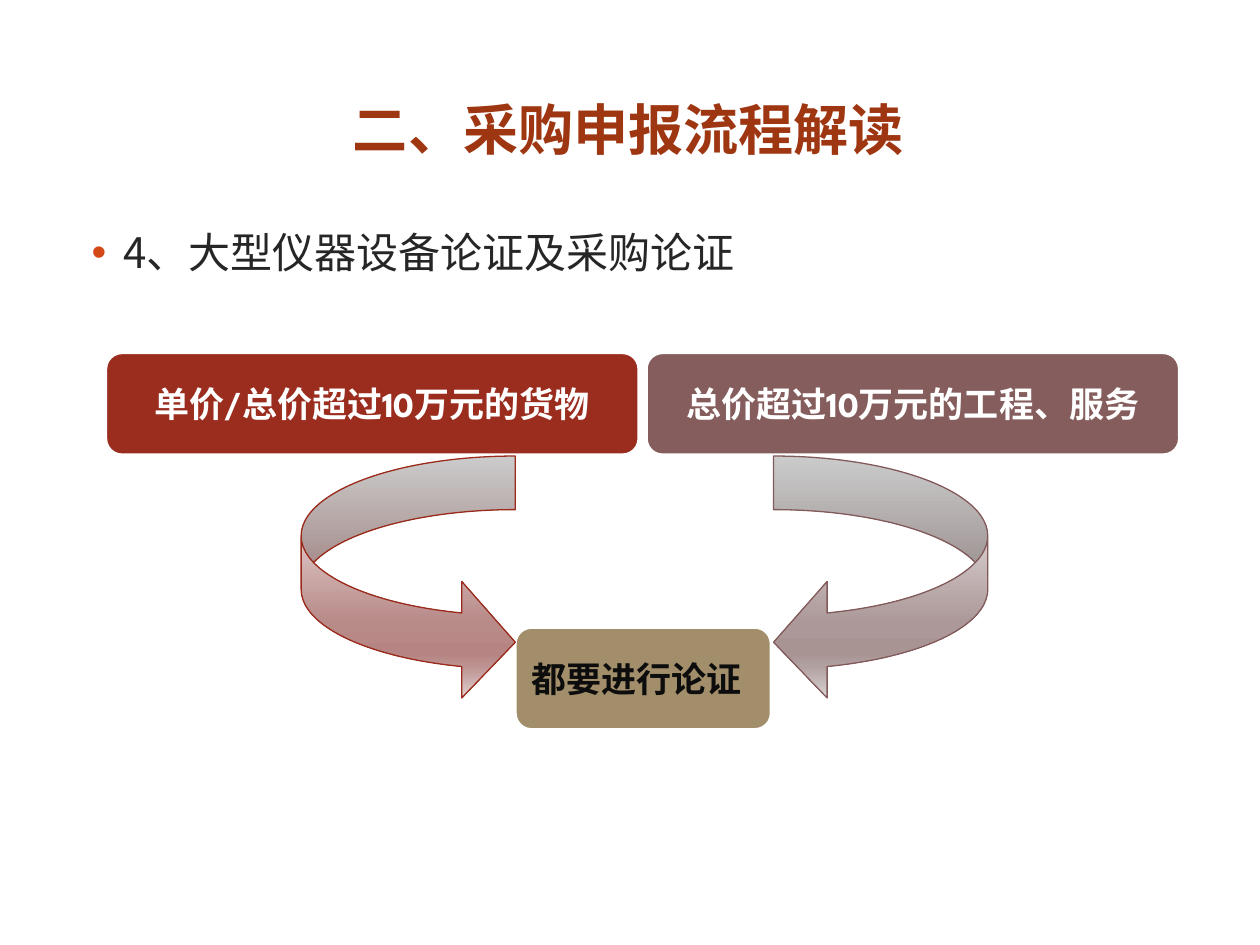
import pptx
import pptx.util
import pptx.dml.color
import pptx.enum.shapes
import pptx.enum.text
import pptx.oxml
import pptx.oxml.ns

Inches = pptx.util.Inches
Pt = pptx.util.Pt
RGBColor = pptx.dml.color.RGBColor
Shape = pptx.enum.shapes.MSO_SHAPE
Align = pptx.enum.text.PP_ALIGN
Anchor = pptx.enum.text.MSO_ANCHOR

WHITE = RGBColor(0xFF, 0xFF, 0xFF)
BRICK = RGBColor(0x9E, 0x36, 0x11)
CHARCOAL = RGBColor(0x26, 0x26, 0x26)
ORANGE = RGBColor(0xD3, 0x48, 0x17)
RED = RGBColor(0x9B, 0x2D, 0x1F)
MAUVE = RGBColor(0x85, 0x5D, 0x5D)
TAN = RGBColor(0xA2, 0x8E, 0x6A)
BLACK = RGBColor(0x0D, 0x0D, 0x0D)
RED_EDGE = RGBColor(0x9B, 0x2A, 0x1B)
MAUVE_EDGE = RGBColor(0x83, 0x5A, 0x5A)

CHINESE_FONT = "Noto Sans CJK SC"
BOX_FONT = "League Spartan"
TITLE = "二、采购申报流程解读"
HEADING = "4、大型仪器设备论证及采购论证"
BOX_HEIGHT = 0.83
BOXES = [
    ("单价/总价超过10万元的货物", 0.83, 2.79, 4.25, RED, WHITE, Align.CENTER),
    ("总价超过10万元的工程、服务", 5.12, 2.79, 4.25, MAUVE, WHITE, Align.CENTER),
    ("都要进行论证", 4.08, 4.97, 2.05, TAN, BLACK, Align.LEFT),
]
STOP_POSITIONS = (0, 68, 81, 86, 100)
ARROWS = [
    (2.39, False, RED_EDGE, ("FEFEFE", "B88A88", "B68583", "BD9392", "E2D4D4")),
    (6.14, True, MAUVE_EDGE, ("FEFEFE", "AC9898", "A99494", "B1A0A0", "DED8D8")),
]


def write_text(shape, text, size, color, font=CHINESE_FONT, bold=False,
               align=Align.LEFT, anchor=Anchor.MIDDLE):
    frame = shape.text_frame
    frame.word_wrap = True
    frame.auto_size = pptx.enum.text.MSO_AUTO_SIZE.NONE
    frame.vertical_anchor = anchor
    paragraph = frame.paragraphs[0]
    paragraph.alignment = align
    run = paragraph.add_run()
    run.text = text
    run.font.size = Pt(size)
    run.font.bold = bold
    run.font.name = font
    run.font.color.rgb = color
    east_asian = pptx.oxml.parse_xml(
        f'<a:ea {pptx.oxml.ns.nsdecls("a")} typeface="{CHINESE_FONT}"/>')
    run.font._element.find(pptx.oxml.ns.qn("a:latin")).addnext(east_asian)
    return paragraph


def add_bullet(paragraph, color):
    properties = paragraph._p.get_or_add_pPr()
    properties.set("marL", str(Inches(0.38)))
    properties.set("indent", str(Inches(-0.25)))
    namespace = pptx.oxml.ns.nsdecls("a")
    for xml in (f'<a:buClr {namespace}><a:srgbClr val="{color}"/></a:buClr>',
                f'<a:buFont {namespace} typeface="Arial"/>',
                f'<a:buChar {namespace} char="•"/>'):
        properties.append(pptx.oxml.parse_xml(xml))


def add_preset(slide, preset, left, top, width, height, line_color, line_width):
    shape = slide.shapes.add_shape(
        preset, Inches(left), Inches(top), Inches(width), Inches(height))
    shape.shadow.inherit = False
    shape.line.color.rgb = line_color
    shape.line.width = Pt(line_width)
    return shape


def fill_gradient(shape, colors):
    shape.fill.gradient()
    shape.fill.gradient_angle = 270
    stops = shape._element.spPr.find(pptx.oxml.ns.qn("a:gradFill")).find(
        pptx.oxml.ns.qn("a:gsLst"))
    for stop in list(stops):
        stops.remove(stop)
    for position, color in zip(STOP_POSITIONS, colors):
        stops.append(pptx.oxml.parse_xml(
            f'<a:gs {pptx.oxml.ns.nsdecls("a")} pos="{position * 1000}">'
            f'<a:srgbClr val="{color}"/></a:gs>'))


def main():
    presentation = pptx.Presentation()
    presentation.slide_width = Inches(10)
    presentation.slide_height = Inches(7.5)
    slide = presentation.slides.add_slide(presentation.slide_layouts[5])

    title = slide.shapes.title
    title.left, title.top = Inches(0.47), Inches(0.45)
    title.width, title.height = Inches(9.03), Inches(1.14)
    write_text(title, TITLE, 31.5, BRICK, bold=True, align=Align.CENTER)

    body = slide.shapes.add_textbox(
        Inches(0.5), Inches(1.75), Inches(9), Inches(5.62))
    add_bullet(write_text(body, HEADING, 24, CHARCOAL, anchor=Anchor.TOP), ORANGE)

    for text, left, top, width, fill, color, align in BOXES:
        box = add_preset(slide, Shape.ROUNDED_RECTANGLE, left, top, width,
                         BOX_HEIGHT, WHITE, 3)
        box.fill.solid()
        box.fill.fore_color.rgb = fill
        write_text(box, text, 20, color, font=BOX_FONT, bold=True, align=align)

    for left, flipped, edge, colors in ARROWS:
        arrow = add_preset(slide, Shape.CURVED_RIGHT_ARROW, left, 3.62, 1.7, 1.94,
                           edge, 0.75)
        for index, value in enumerate((0.25, 0.544, 0.25)):
            arrow.adjustments[index] = value
        fill_gradient(arrow, colors)
        if flipped:
            arrow._element.spPr.xfrm.set("flipH", "1")

    presentation.save("out.pptx")


if __name__ == "__main__":
    main()
